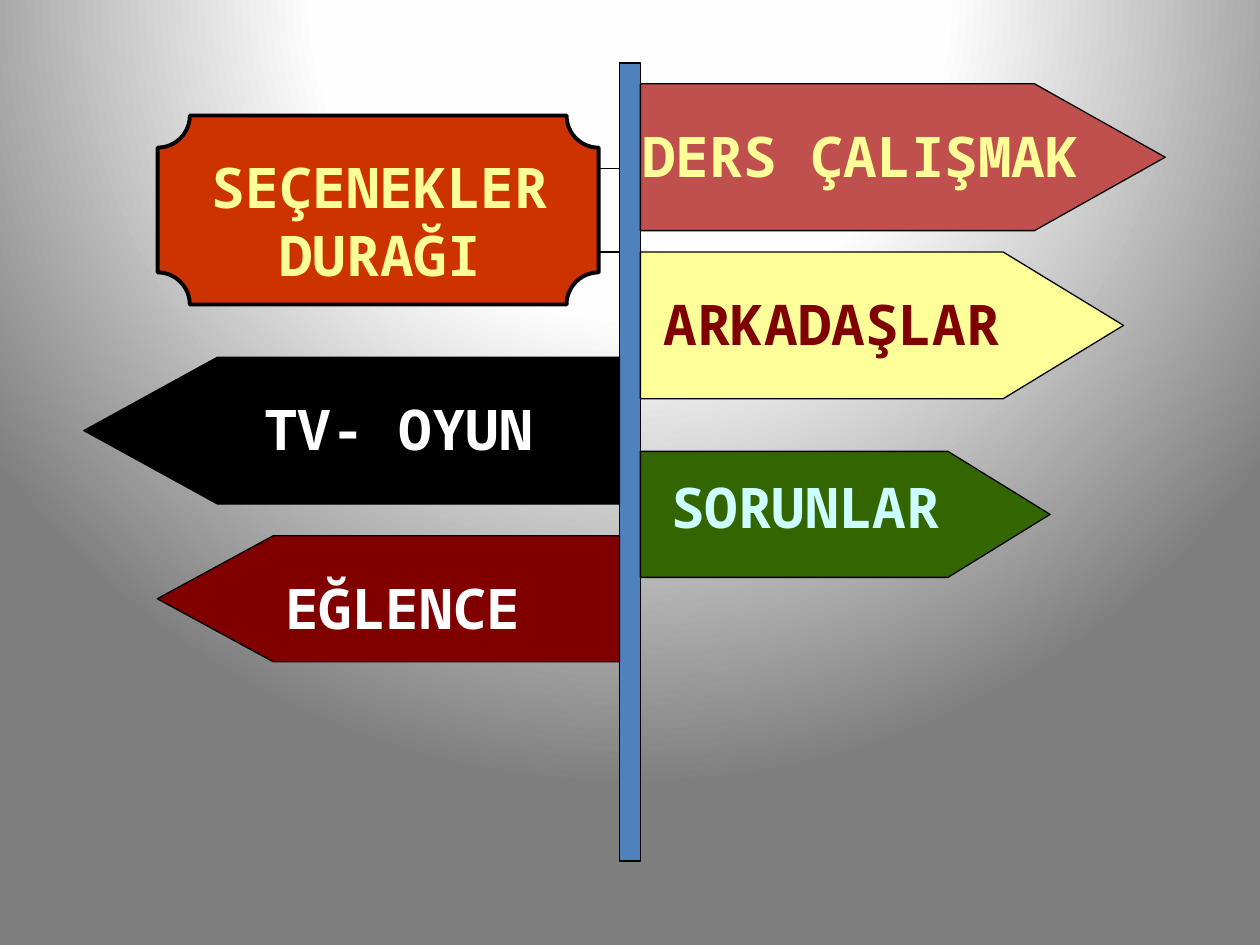
from dataclasses import dataclass

from lxml.etree import SubElement
from pptx import Presentation
from pptx.dml.color import RGBColor
from pptx.enum.shapes import MSO_CONNECTOR, MSO_SHAPE
from pptx.enum.text import MSO_AUTO_SIZE, PP_ALIGN
from pptx.oxml import parse_xml
from pptx.oxml.ns import nsdecls, qn
from pptx.util import Cm, Pt

COLORS = {
    "black": "000000", "white": "FFFFFF", "maroon": "800000",
    "orange": "CC3300", "blue": "4F81BD", "red": "C0504D",
    "yellow": "FFFF99", "green": "336600", "ice": "CCFFFF",
}
FONT = "Noto Sans Mono"
POST_LEFT, POST_RIGHT = 12.49, 12.91
POST_TOP, POST_HEIGHT = 1.27, 16.09
PLAQUE_RIGHT = 12.07

BACKGROUND = f"""
<p:bg {nsdecls("p", "a")}><p:bgPr>
  <a:gradFill rotWithShape="1">
    <a:gsLst>
      <a:gs pos="0"><a:srgbClr val="FFFFFF"/></a:gs>
      <a:gs pos="40000"><a:srgbClr val="FEFEFE"/></a:gs>
      <a:gs pos="100000"><a:srgbClr val="7F7F7F"/></a:gs>
    </a:gsLst>
    <a:path path="circle">
      <a:fillToRect l="50000" t="-80000" r="50000" b="180000"/>
    </a:path>
  </a:gradFill><a:effectLst/>
</p:bgPr></p:bg>"""


@dataclass(frozen=True)
class Box:
    """Position and size in centimetres."""
    left: float
    top: float
    width: float
    height: float

    def lengths(self) -> tuple:
        return Cm(self.left), Cm(self.top), Cm(self.width), Cm(self.height)


@dataclass(frozen=True)
class Sign:
    """An arrow board on one side of the post, with its label."""
    label: str
    top: float
    width: float
    height: float
    point: float
    fill: str
    text_color: str
    label_box: Box
    points_left: bool = False

    @property
    def board(self) -> Box:
        left = POST_LEFT - self.width if self.points_left else POST_RIGHT
        return Box(left, self.top, self.width, self.height)


SIGNS = [
    Sign("EĞLENCE", 10.8, 9.32, 2.54, 0.92, "maroon", "white",
         Box(5.5, 11.43, 5.92, 1.6), points_left=True),
    Sign("DERS ÇALIŞMAK", 1.69, 10.58, 2.96, 0.89, "red", "yellow",
         Box(12.7, 2.33, 9.7, 1.6)),
    Sign("ARKADAŞLAR", 5.08, 9.74, 2.96, 0.82, "yellow", "maroon",
         Box(13.13, 5.71, 8.13, 1.6)),
    Sign("SORUNLAR", 9.1, 8.26, 2.54, 0.81, "green", "ice",
         Box(13.28, 9.4, 6.81, 1.6)),
    Sign("TV- OYUN", 7.2, 10.8, 2.96, 0.91, "black", "white",
         Box(5.08, 7.83, 5.94, 1.6), points_left=True),
]


def rgb(name: str) -> RGBColor:
    return RGBColor.from_string(COLORS[name])


def draw_shape(slide, kind: MSO_SHAPE, box: Box, fill: str, line_width: float = 0.75):
    shape = slide.shapes.add_shape(kind, *box.lengths())
    shape.shadow.inherit = False
    shape.fill.solid()
    shape.fill.fore_color.rgb = rgb(fill)
    shape.line.color.rgb = rgb("black")
    shape.line.width = Pt(line_width)
    return shape


def draw_label(slide, lines: list[str], box: Box, color: str,
               align: PP_ALIGN = PP_ALIGN.LEFT) -> None:
    frame = slide.shapes.add_textbox(*box.lengths()).text_frame
    frame.word_wrap = False
    frame.auto_size = MSO_AUTO_SIZE.SHAPE_TO_FIT_TEXT
    for index, line in enumerate(lines):
        paragraph = frame.add_paragraph() if index else frame.paragraphs[0]
        paragraph.alignment = align
        run = paragraph.add_run()
        run.text = line
        run.font.name = FONT
        run.font.size = Pt(32)
        run.font.bold = True
        run.font.color.rgb = rgb(color)


def draw_sign(slide, sign: Sign) -> None:
    board = draw_shape(slide, MSO_SHAPE.PENTAGON, sign.board, sign.fill)
    board.adjustments[0] = sign.point
    if sign.points_left:
        board.rotation = 180
    draw_label(slide, [sign.label], sign.label_box, sign.text_color)


def draw_bracket(slide, y: float) -> None:
    bracket = slide.shapes.add_connector(
        MSO_CONNECTOR.STRAIGHT, Cm(PLAQUE_RIGHT), Cm(y), Cm(POST_LEFT), Cm(y))
    bracket.line.color.rgb = rgb("black")
    bracket.line.width = Pt(0.75)
    SubElement(bracket._element.spPr, qn("a:effectLst"))


def main() -> None:
    presentation = Presentation()
    presentation.slide_width, presentation.slide_height = Cm(25.4), Cm(19.05)
    slide = presentation.slides.add_slide(presentation.slide_layouts[6])
    slide._element.cSld.insert(0, parse_xml(BACKGROUND))

    # Title plaque, held to the post by two brackets
    plaque = draw_shape(slide, MSO_SHAPE.PLAQUE,
                        Box(PLAQUE_RIGHT - 8.89, 2.33, 8.89, 3.81), "orange", 2.25)
    plaque.adjustments[0] = 0.17
    for bracket_y in (3.39, 5.08):
        draw_bracket(slide, bracket_y)
    draw_label(slide, ["SEÇENEKLER", "DURAĞI"], Box(3.6, 2.96, 8.13, 2.96),
               "yellow", PP_ALIGN.CENTER)

    # Signpost
    draw_shape(slide, MSO_SHAPE.RECTANGLE,
               Box(POST_LEFT, POST_TOP, POST_RIGHT - POST_LEFT, POST_HEIGHT), "blue")

    # Arrow signs
    for sign in SIGNS:
        draw_sign(slide, sign)

    presentation.save("out.pptx")


if __name__ == "__main__":
    main()
